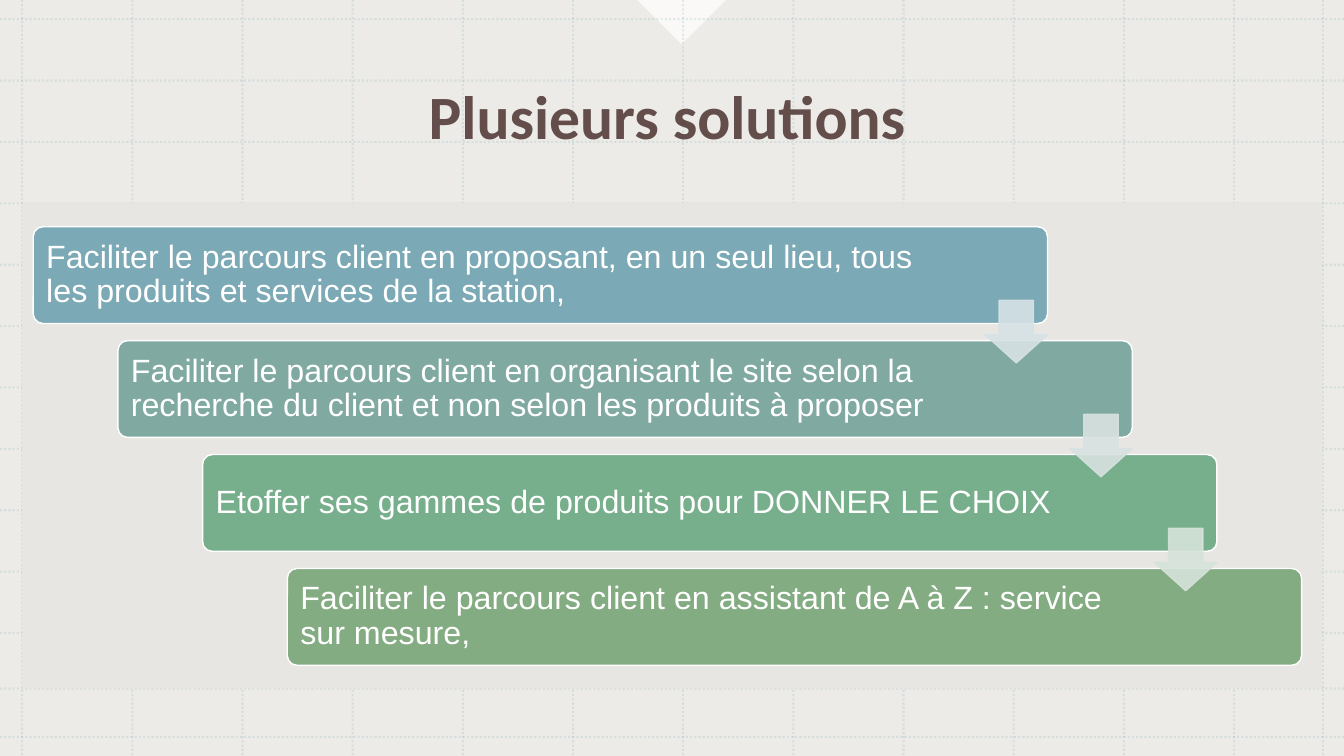
from lxml import etree
from pptx import Presentation
from pptx.dml.color import RGBColor
from pptx.enum.dml import MSO_LINE
from pptx.enum.shapes import MSO_CONNECTOR, MSO_SHAPE
from pptx.enum.text import MSO_ANCHOR, PP_ALIGN
from pptx.oxml.ns import qn
from pptx.util import Inches, Pt

STRAIGHT = MSO_CONNECTOR.STRAIGHT
DOTTED = MSO_LINE.ROUND_DOT
RECTANGLE = MSO_SHAPE.RECTANGLE
RIGHT_TRIANGLE = MSO_SHAPE.RIGHT_TRIANGLE
ROUNDED = MSO_SHAPE.ROUNDED_RECTANGLE
DOWN_ARROW = MSO_SHAPE.DOWN_ARROW
MIDDLE = MSO_ANCHOR.MIDDLE
LEFT, CENTER = PP_ALIGN.LEFT, PP_ALIGN.CENTER

COLORS = {
    "white": "FFFFFF",
    "sand": "E8E6E2",
    "grid": "7BA9B5",
    "title": "412724",
}
WIDTH, HEIGHT = 13.33, 7.5
STEP_X, STEP_Y = 0.84, 1.13

# Wording, text width, bar colour, colour of the arrow to the next step
STEPS = [
    ("Faciliter le parcours client en proposant, en un seul lieu, tous "
     "les produits et services de la station,", 8.95, "7BA9B5", "D7E2E5"),
    ("Faciliter le parcours client en organisant le site selon la recherche "
     "du client et non selon les produits à proposer", 8.54, "80AAA1", "D8E2E0"),
    ("Etoffer ses gammes de produits pour DONNER LE CHOIX",
     8.55, "77AE8B", "D6E3DA"),
    ("Faciliter le parcours client en assistant de A à Z : service "
     "sur mesure,", 8.54, "84AC82", None),
]


def paint(color_holder, color, opacity=100):
    """Set a solid fill or a font to a colour with an opacity in percent."""
    fill = color_holder.fill
    fill.solid()
    fill.fore_color.rgb = RGBColor.from_string(color)
    if opacity < 100:
        for tone in color_holder.element_with_fill.iter(qn("a:srgbClr")):
            etree.SubElement(tone, qn("a:alpha"), val=str(opacity * 1000))


def set_opacity(element, opacity):
    """Give every colour below the element an opacity in percent."""
    for tone in element.iter(qn("a:srgbClr")):
        etree.SubElement(tone, qn("a:alpha"), val=str(opacity * 1000))


def add_block(page, kind, left, top, width, height, fill, line=None, opacity=100):
    block = page.shapes.add_shape(
        kind, Inches(left), Inches(top), Inches(width), Inches(height))
    block.shadow.inherit = False
    block.fill.solid()
    block.fill.fore_color.rgb = RGBColor.from_string(fill)
    if line:
        block.line.color.rgb = RGBColor.from_string(line)
        block.line.width = Pt(1)
    else:
        block.line.fill.background()
    if opacity < 100:
        set_opacity(block.element.spPr, opacity)
    return block


def add_grid_line(page, x1, y1, x2, y2):
    rule = page.shapes.add_connector(
        STRAIGHT, Inches(x1), Inches(y1), Inches(x2), Inches(y2))
    rule.line.color.rgb = RGBColor.from_string(COLORS["grid"])
    rule.line.width = Pt(1.5)
    rule.line.dash_style = DOTTED
    properties = rule.element.spPr
    set_opacity(properties, 20)
    etree.SubElement(properties, qn("a:effectLst"))


def add_grid(page):
    for x in [0.22 + 1.0927 * column for column in range(12)] + [13.12]:
        add_grid_line(page, x, 0, x, HEIGHT)
    for y in [0.19 + 0.609 * row for row in range(11)] + [6.83, 7.31]:
        add_grid_line(page, 0, y, WIDTH, y)


def add_text(page, left, top, width, height, text, font, size, color, align=LEFT):
    box = page.shapes.add_textbox(
        Inches(left), Inches(top), Inches(width), Inches(height))
    frame = box.text_frame
    frame.word_wrap = True
    frame.vertical_anchor = MIDDLE
    frame.margin_left = frame.margin_right = Inches(0.1)
    frame.margin_top = frame.margin_bottom = Inches(0.1)
    para = frame.paragraphs[0]
    para.text = text
    para.alignment = align
    para.line_spacing = 0.9
    para.font.name = font
    para.font.size = Pt(size)
    para.font.color.rgb = RGBColor.from_string(color)
    return box


def add_title(page, text):
    box = add_text(page, 0.33, 0.37, 12.58, 1.64, text,
                   "Calibri", 44, COLORS["title"], CENTER)
    box.text_frame.paragraphs[0].font.bold = True
    set_opacity(box.element.txBody, 80)


def add_step(page, index, text, text_width, color):
    left, top = 0.33 + STEP_X * index, 2.25 + STEP_Y * index
    bar = add_block(page, ROUNDED, left, top, 10.06, 0.96, color, COLORS["white"])
    bar.adjustments[0] = 0.1
    add_text(page, left + 0.03, top + 0.03, text_width, 0.9, text,
             "Arial", 23, COLORS["white"])


def add_step_arrow(page, index, color):
    arrow = add_block(page, DOWN_ARROW, 9.77 + STEP_X * index,
                      2.98 + STEP_Y * index, 0.62, 0.62, color, color, 90)
    # The downArrow shape lists its head length second and shaft width first
    arrow.adjustments[0] = 0.55
    arrow.adjustments[1] = 0.45


def main():
    deck = Presentation()
    deck.slide_width, deck.slide_height = Inches(WIDTH), Inches(HEIGHT)
    page = deck.slides.add_slide(deck.slide_layouts[6])

    add_block(page, RECTANGLE, 0, 0, WIDTH, HEIGHT, COLORS["sand"], opacity=80)
    notch = add_block(page, RIGHT_TRIANGLE, 6.45, -0.31, 0.62, 0.62,
                      COLORS["white"], opacity=75)
    notch.rotation = 315
    add_grid(page)
    add_block(page, RECTANGLE, 0.22, 2.01, 12.89, 4.82, COLORS["sand"])
    add_title(page, "Plusieurs solutions")

    for index, (text, text_width, color, _) in enumerate(STEPS):
        add_step(page, index, text, text_width, color)
    for index, (*_, arrow_color) in enumerate(STEPS):
        if arrow_color:
            add_step_arrow(page, index, arrow_color)

    deck.save("out.pptx")


if __name__ == "__main__":
    main()
